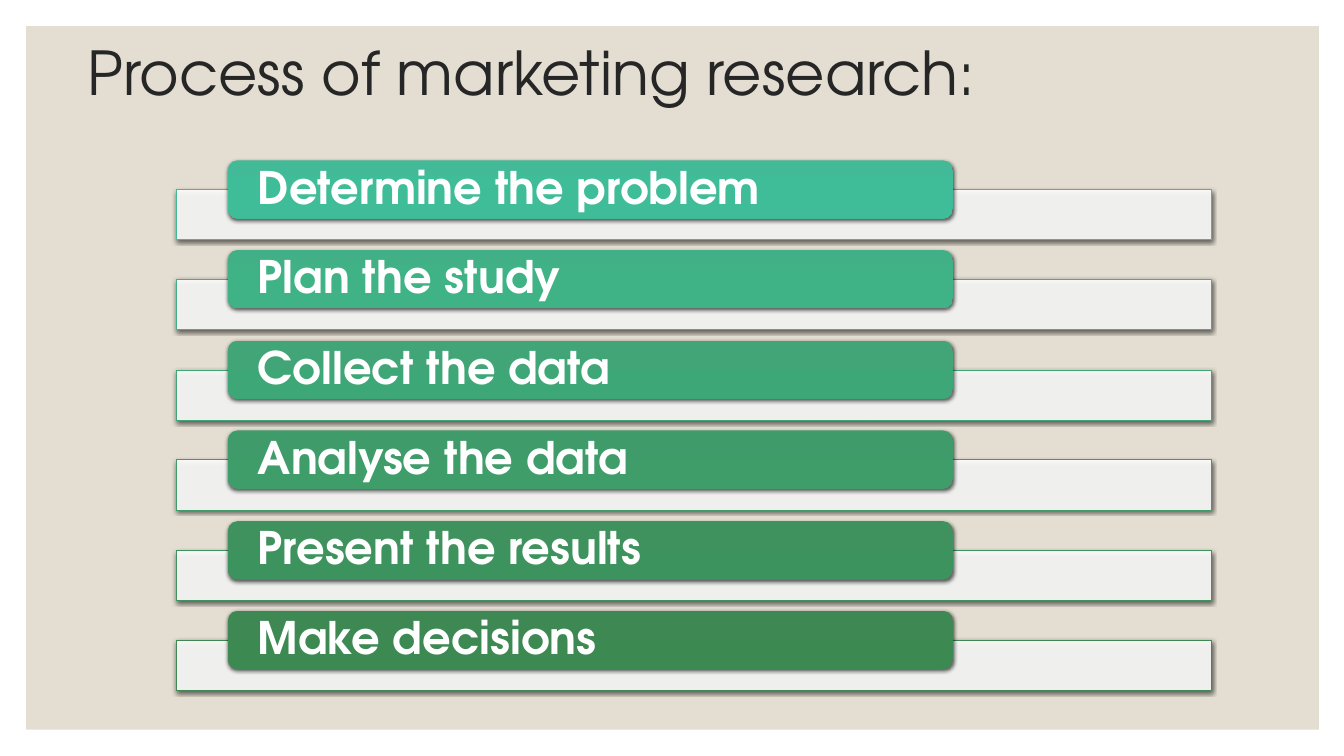
"""Build the slide that lists the six steps of marketing research."""
from copy import deepcopy
from dataclasses import dataclass

from lxml.etree import SubElement
from pptx import Presentation
from pptx.dml.color import RGBColor
from pptx.enum.shapes import MSO_SHAPE
from pptx.enum.text import MSO_ANCHOR, PP_ALIGN
from pptx.oxml.ns import qn
from pptx.util import Pt

SCALE = 9144
STEPS = [
    ("Determine the problem", ("42BA97", "3FBC98", "3EBB97")),
    ("Plan the study", ("42B086", "3FB286", "3EB186")),
    ("Collect the data", ("41A577", "3EA777", "3EA676")),
    ("Analyse the data", ("409B6A", "3E9D69", "3D9C68")),
    ("Present the results", ("3F925E", "3D935D", "3D925C")),
    ("Make decisions", ("3E8853", "3C8952", "3C8951")),
]
FIRST_BAR_TOP, FIRST_TAB_TOP, STEP_PITCH = 188, 159, 89.4


@dataclass(frozen=True)
class Theme:
    font: str = "TeX Gyre Adventor"
    panel: str = "E3DED1"
    title: str = "262626"
    white: str = "FFFFFF"
    shadow: str = "000000"
    title_size: float = 43.2
    step_size: float = 32
    step_gap: float = 11.2
    line_spacing: float = 0.9
    bar_line: float = 0.5


class SlideBuilder:
    def __init__(self, slide, theme):
        self.slide = slide
        self.theme = theme

    def shape(self, kind, box):
        shape = self.slide.shapes.add_shape(kind, *(n * SCALE for n in box))
        shape.shadow.inherit = False
        shape.line.fill.background()
        return shape

    def solid(self, shape, color):
        shape.fill.solid()
        shape.fill.fore_color.rgb = RGBColor.from_string(color)

    def drop_shadow(self, shape):
        effects = shape._element.spPr.find(qn("a:effectLst"))
        shadow = SubElement(effects, qn("a:outerShdw"), blurRad="38100",
                            dist="12700", dir="5400000", rotWithShape="0")
        color = SubElement(shadow, qn("a:srgbClr"), val=self.theme.shadow)
        SubElement(color, qn("a:alpha"), val="63000")

    def label(self, shape, text, size, color, bold=False, inset=(10, 5), gap=0):
        frame = shape.text_frame
        side, edge = (n * SCALE for n in inset)
        frame_format = {
            "word_wrap": True, "vertical_anchor": MSO_ANCHOR.MIDDLE,
            "margin_left": side, "margin_right": side,
            "margin_top": edge, "margin_bottom": edge,
        }
        paragraph = frame.paragraphs[0]
        paragraph_format = {
            "alignment": PP_ALIGN.LEFT, "space_after": Pt(gap),
            "line_spacing": self.theme.line_spacing,
        }
        run = paragraph.add_run()
        run.text = text
        font_format = {"name": self.theme.font, "size": Pt(size), "bold": bold}
        for target, values in ((frame, frame_format),
                               (paragraph, paragraph_format),
                               (run.font, font_format)):
            for name, value in values.items():
                setattr(target, name, value)
        run.font.color.rgb = RGBColor.from_string(color)

    def panel(self, box):
        self.solid(self.shape(MSO_SHAPE.RECTANGLE, box), self.theme.panel)

    def title(self, text, box):
        shape = self.slide.shapes.add_textbox(*(n * SCALE for n in box))
        self.label(shape, text, self.theme.title_size, self.theme.title)

    def bar(self, box, line_color):
        shape = self.shape(MSO_SHAPE.RECTANGLE, box)
        self.solid(shape, self.theme.white)
        color = shape._element.spPr.find(qn("a:solidFill")).find(qn("a:srgbClr"))
        SubElement(color, qn("a:alpha"), val="90000")
        shape.line.color.rgb = RGBColor.from_string(line_color)
        shape.line.width = Pt(self.theme.bar_line)
        self.drop_shadow(shape)

    def tab(self, text, box, colors):
        shape = self.shape(MSO_SHAPE.ROUNDED_RECTANGLE, box)
        shape.fill.gradient()
        shape.fill.gradient_angle = 270
        stops = shape._element.spPr.find(qn("a:gradFill")).find(qn("a:gsLst"))
        stops.insert(1, deepcopy(stops[0]))
        for index, (stop, color) in enumerate(zip(shape.fill.gradient_stops, colors)):
            stop.position = index / 2
            stop.color.rgb = RGBColor.from_string(color)
        self.drop_shadow(shape)
        self.label(shape, text, self.theme.step_size, self.theme.white,
                   bold=True, inset=(27, 3), gap=self.theme.step_gap)


def main():
    presentation = Presentation()
    presentation.slide_width = 1333 * SCALE
    presentation.slide_height = 750 * SCALE
    slide = presentation.slides.add_slide(presentation.slide_layouts[6])
    builder = SlideBuilder(slide, Theme())
    builder.panel((26, 26, 1282, 698))
    builder.title("Process of marketing research:", (77, 35, 1031, 80))
    for index, (text, colors) in enumerate(STEPS):
        offset = STEP_PITCH * index
        builder.bar((175, round(FIRST_BAR_TOP + offset), 1027, 50), colors[0])
        builder.tab(text, (226, round(FIRST_TAB_TOP + offset), 719, 58), colors)
    presentation.save("out.pptx")


if __name__ == "__main__":
    main()
